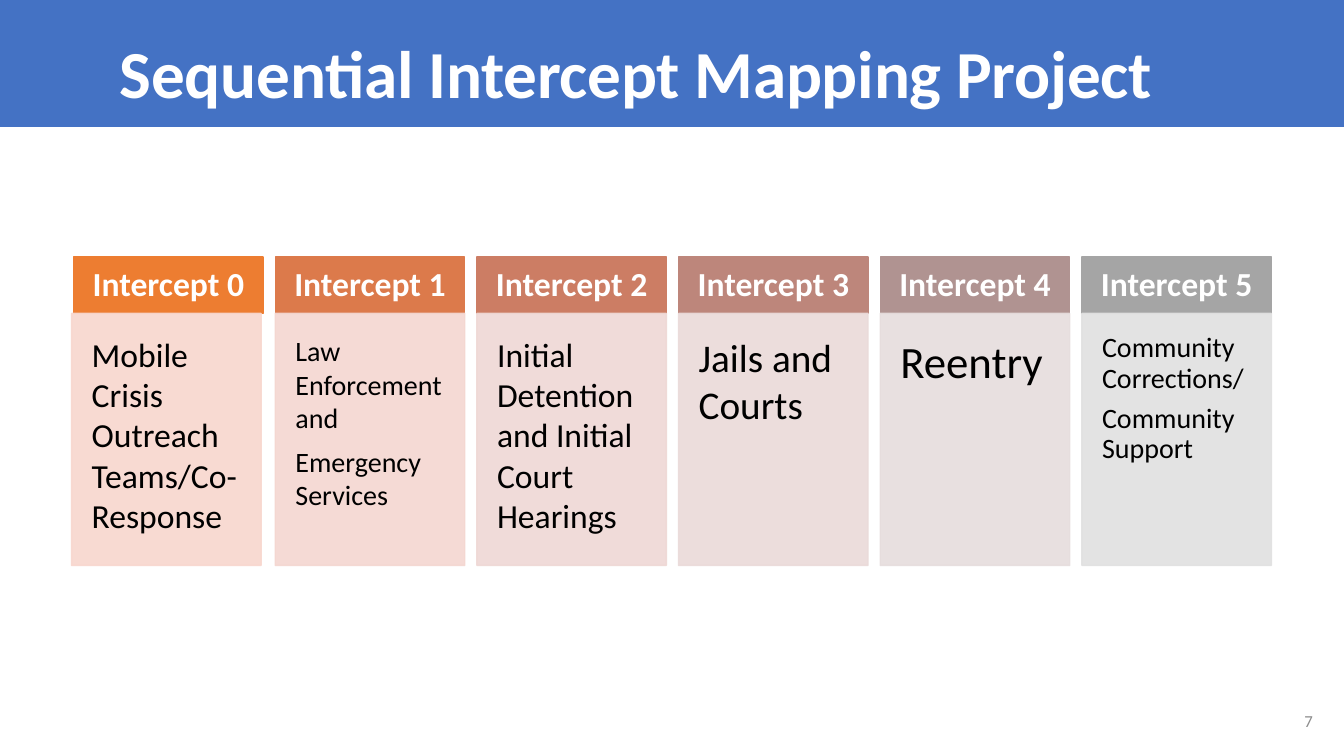
from lxml import etree
from pptx import Presentation
from pptx.dml.color import RGBColor
from pptx.enum.shapes import MSO_SHAPE
from pptx.enum.text import MSO_ANCHOR, MSO_AUTO_SIZE, PP_ALIGN
from pptx.oxml.ns import qn
from pptx.util import Inches, Pt

FONT = "Calibri"
HEADER_H = 0.56
COLUMN_W, COLUMN_H, PITCH = 1.88, 3.06, 2
# Header colour, body colour, body size, line spacing, body paragraphs
INTERCEPTS = [
    ("ED7D31", "F8D7CE", 24, 1, ["Mobile Crisis Outreach Teams/Co-Response"]),
    ("DC7A4B", "F4D7D1", 20, 1, ["Law Enforcement and", "Emergency Services"]),
    ("CC7D64", "EFD8D5", 24, 1, ["Initial Detention and Initial Court Hearings"]),
    ("BD867B", "EADAD9", 28, 1, ["Jails and Courts"]),
    ("B09391", "E6DDDD", 32, 1, ["Reentry"]),
    ("A5A5A5", "E1E1E1", 20, 0.9, ["Community Corrections/", "Community Support"]),
]


def paint(color_format, color):
    color_format.rgb = RGBColor.from_string(color)


def set_font(p, size, color, bold=False):
    p.font.name, p.font.size, p.font.bold = FONT, Pt(size), bold
    paint(p.font.color, color)


def add_rect(slide, x, y, w, h, color, opacity=100):
    sp = slide.shapes.add_shape(
        MSO_SHAPE.RECTANGLE, Inches(x), Inches(y), Inches(w), Inches(h))
    sp.shadow.inherit = False
    sp.fill.solid()
    paint(sp.fill.fore_color, color)
    paint(sp.line.color, color)
    sp.line.width = Pt(1)
    if opacity < 100:
        for clr in sp._element.spPr.iter(qn("a:srgbClr")):
            etree.SubElement(clr, qn("a:alpha")).set("val", str(opacity * 1000))
    return sp


def fill_text(sp, lines, size, color, inset, anchor, align, spacing, bold=False):
    tf = sp.text_frame
    tf.word_wrap = True
    tf.vertical_anchor = anchor
    tf.margin_left = tf.margin_right = Inches(inset)
    tf.margin_top = tf.margin_bottom = Inches(inset)
    tf.text = "\n".join(lines)
    for p in tf.paragraphs:
        p.alignment = align
        p.line_spacing = spacing
        p.space_after = Pt(size * 0.35)
        set_font(p, size, color, bold)


def add_title_band(slide, w, h, text):
    band = add_rect(slide, 0, 0, w, h, "4472C4")
    band.line.fill.background()
    title = slide.shapes.title
    band._element.addnext(title._element)  # keeps the title above the band
    title.left, title.top = Inches(1.09), Inches(0.21)
    title.width, title.height = Inches(10.96), Inches(1)
    tf = title.text_frame
    tf.text = text
    tf.auto_size = MSO_AUTO_SIZE.NONE
    tf.vertical_anchor = MSO_ANCHOR.MIDDLE
    p = tf.paragraphs[0]
    p.alignment = PP_ALIGN.LEFT
    set_font(p, 48, "FFFFFF", bold=True)
    p.runs[0].font._element.set("spc", "-20")


def add_intercept(slide, x, y, w, h, number, body_dx=0):
    header_color, body_color, size, spacing, lines = INTERCEPTS[number]
    header = add_rect(slide, x, y, w, HEADER_H, header_color)
    fill_text(header, [f"Intercept {number}"], 24, "FFFFFF", 0.15,
              MSO_ANCHOR.MIDDLE, PP_ALIGN.CENTER, 0.9, bold=True)
    body = add_rect(slide, x + body_dx, y + HEADER_H, w, h - HEADER_H, body_color, 90)
    fill_text(body, lines, size, "000000", 0.2,
              MSO_ANCHOR.TOP, PP_ALIGN.LEFT, spacing)


def add_page_number(slide, x, y, w, h, number):
    box = slide.shapes.add_textbox(Inches(x), Inches(y), Inches(w), Inches(h))
    tf = box.text_frame
    tf.word_wrap = True
    tf.vertical_anchor = MSO_ANCHOR.MIDDLE
    p = tf.paragraphs[0]
    p.text = str(number)
    p.alignment = PP_ALIGN.RIGHT
    set_font(p, 12, "8C8C8C")


def main():
    prs = Presentation()
    prs.slide_width, prs.slide_height = Inches(13.33), Inches(7.5)
    slide = prs.slides.add_slide(prs.slide_layouts.get_by_name("Title Only"))
    add_title_band(slide, 13.33, 1.26, "Sequential Intercept Mapping Project")
    for i in range(len(INTERCEPTS)):
        add_intercept(slide, 0.73 + i * PITCH, 2.55, COLUMN_W, COLUMN_H, i,
                      body_dx=-0.02 if i == 0 else 0)
    add_page_number(slide, 12.43, 6.95, 0.69, 0.4, 7)
    prs.save("out.pptx")


if __name__ == "__main__":
    main()
